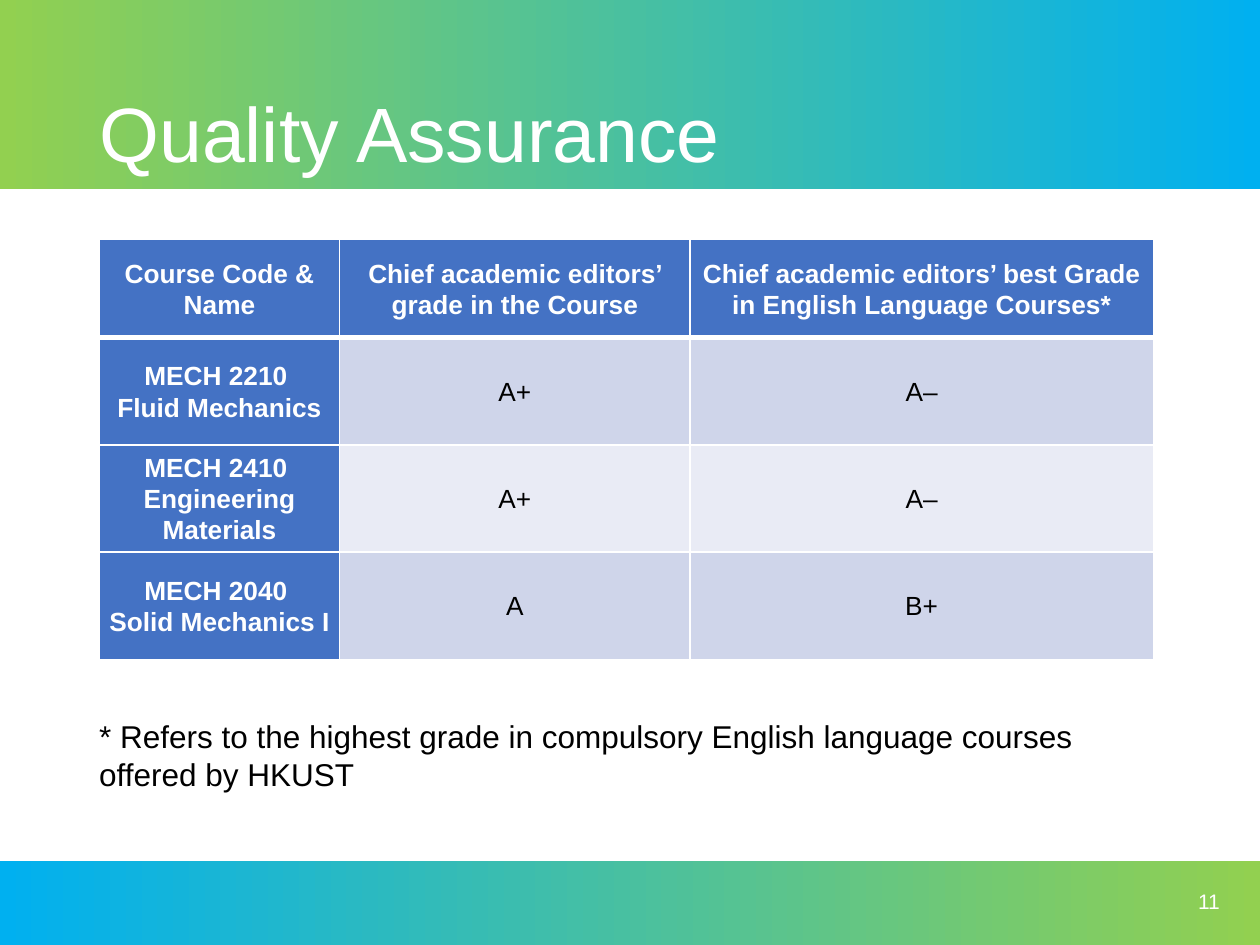
from dataclasses import dataclass

from lxml import etree
from pptx import Presentation
from pptx import util as u
from pptx.dml.color import RGBColor
from pptx.enum import shapes, text
from pptx.oxml.ns import qn


@dataclass(frozen=True)
class Theme:
    font: str = "Arial"
    white: str = "FFFFFF"
    black: str = "000000"
    sky: str = "00B0F0"
    lime: str = "92D050"
    header: str = "4472C4"
    stripes: tuple = ("CFD5EA", "E9EBF5")
    title_size: int = 44
    note_size: int = 18
    table_size: int = 15
    number_size: int = 12


HEADINGS = [
    "Course Code & Name",
    "Chief academic editors’ grade in the Course",
    "Chief academic editors’ best Grade in English Language Courses*",
]
COURSES = [
    ["MECH 2210 \nFluid Mechanics", "A+", "A–"],
    ["MECH 2410 \nEngineering Materials", "A+", "A–"],
    ["MECH 2040 \nSolid Mechanics I", "A", "B+"],
]
NOTE = ("* Refers to the highest grade in compulsory English language courses "
        "offered by HKUST")


def rgb(color):
    return RGBColor.from_string(color)


class SlideBuilder:
    def __init__(self, page, theme):
        self.page = page
        self.theme = theme

    def set_text(self, frame, words, size, color, align=text.PP_ALIGN.LEFT,
                 bold=False, spacing=None):
        frame.text = words
        for para in frame.paragraphs:
            para.alignment = align
            para.line_spacing = spacing
            for span in para.runs:
                span.font.name = self.theme.font
                span.font.size = u.Pt(size)
                span.font.bold = bold
                span.font.color.rgb = rgb(color)

    def title(self, words, left, top, width, height):
        box = self.page.shapes.title
        box.left, box.top, box.width, box.height = map(u.Cm, (left, top, width, height))
        frame = box.text_frame
        frame.auto_size = text.MSO_AUTO_SIZE.NONE
        frame.vertical_anchor = text.MSO_ANCHOR.MIDDLE
        self.set_text(frame, words, self.theme.title_size, self.theme.white, spacing=0.9)

    def band(self, left, top, width, height, rotation=0):
        box = self.page.shapes.add_shape(
            shapes.MSO_SHAPE.RECTANGLE, *map(u.Cm, (left, top, width, height)))
        box.rotation = rotation
        box.shadow.inherit = False
        box.line.fill.background()
        box.fill.gradient()
        box.fill.gradient_angle = 0
        for stop, color in zip(box.fill.gradient_stops, (self.theme.sky, self.theme.lime)):
            stop.color.rgb = rgb(color)
        self.page.shapes.title.element.addprevious(box.element)

    def label(self, words, left, top, width, height, size, color,
              align=text.PP_ALIGN.LEFT, anchor=text.MSO_ANCHOR.TOP):
        box = self.page.shapes.add_textbox(*map(u.Cm, (left, top, width, height)))
        frame = box.text_frame
        frame.word_wrap = True
        frame.vertical_anchor = anchor
        self.set_text(frame, words, size, color, align)

    def borders(self, cell, **widths):
        properties = cell._tc.get_or_add_tcPr()
        for side in "LRTB":
            line = etree.SubElement(properties, qn(f"a:ln{side}"),
                                    w=str(int(u.Pt(widths.get(side, 1)))))
            fill = etree.SubElement(line, qn("a:solidFill"))
            etree.SubElement(fill, qn("a:srgbClr"), val=self.theme.white)

    def table(self, rows, left, top, widths, heights):
        theme = self.theme
        grid = self.page.shapes.add_table(
            len(rows), len(widths), u.Cm(left), u.Cm(top),
            u.Cm(sum(widths)), u.Cm(sum(heights))).table
        for column, width in zip(grid.columns, widths):
            column.width = u.Cm(width)
        for r, (row, height) in enumerate(zip(rows, heights)):
            grid.rows[r].height = u.Cm(height)
            for c, words in enumerate(row):
                cell = grid.cell(r, c)
                heading = r == 0 or c == 0
                cell.margin_left = cell.margin_right = u.Cm(0.18)
                cell.margin_top = cell.margin_bottom = 0
                cell.vertical_anchor = text.MSO_ANCHOR.MIDDLE
                self.borders(cell, T=3 if r == 1 else 1, B=3 if r == 0 else 1)
                cell.fill.solid()
                cell.fill.fore_color.rgb = rgb(
                    theme.header if heading else theme.stripes[(r - 1) % 2])
                self.set_text(cell.text_frame, words, theme.table_size,
                              theme.white if heading else theme.black,
                              text.PP_ALIGN.CENTER, heading, 1.07)


def main():
    deck = Presentation()
    deck.slide_width, deck.slide_height = u.Cm(25.4), u.Cm(19.05)
    theme = Theme()
    builder = SlideBuilder(deck.slides.add_slide(deck.slide_layouts[5]), theme)
    builder.band(0, 0, 25.4, 3.81, rotation=180)
    builder.band(0, 17.35, 25.4, 1.7)
    builder.title("Quality Assurance", 1.75, 1.7, 21.9, 2.13)
    builder.table([HEADINGS] + COURSES, 2, 4.83,
                  widths=[4.85, 7.06, 9.34], heights=[1.98] + [2.16] * 3)
    builder.label("11", 19.13, 17.65, 5.71, 1.02, theme.number_size, theme.white,
                  text.PP_ALIGN.RIGHT, text.MSO_ANCHOR.MIDDLE)
    builder.label(NOTE, 1.75, 14.33, 21.74, 1.8, theme.note_size, theme.black)
    deck.save("out.pptx")


if __name__ == "__main__":
    main()
